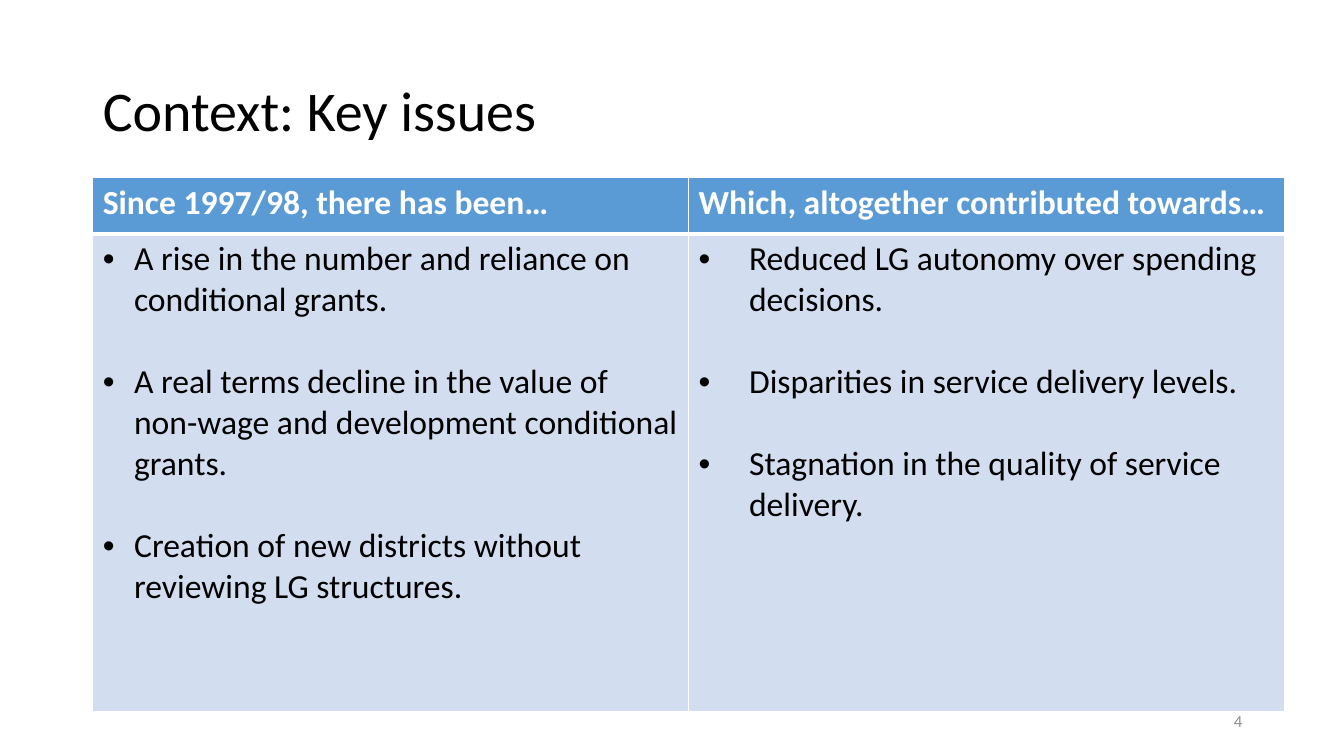
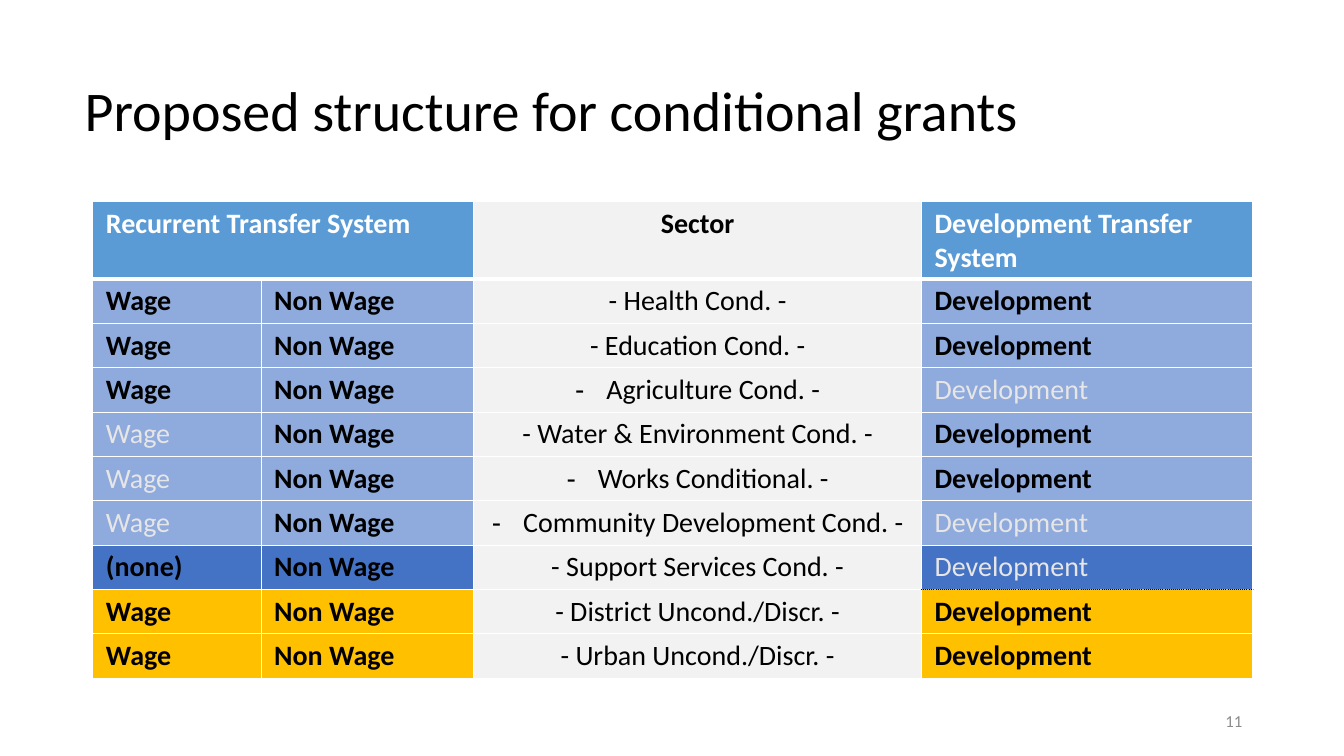
import pptx
import pptx.util
import pptx.dml.color
import pptx.enum.text
import pptx.oxml.ns
import lxml.etree

Inches = pptx.util.Inches
Pt = pptx.util.Pt
RGB = pptx.dml.color.RGBColor
Align = pptx.enum.text.PP_ALIGN
Anchor = pptx.enum.text.MSO_ANCHOR
Fit = pptx.enum.text.MSO_AUTO_SIZE
qn = pptx.oxml.ns.qn

FONT = "Calibri"
BLACK = RGB(0x00, 0x00, 0x00)
WHITE = RGB(0xFF, 0xFF, 0xFF)
HEAD = RGB(0x5B, 0x9B, 0xD5)
PALE = RGB(0xD2, 0xDE, 0xEF)
GREY = RGB(0xF2, 0xF2, 0xF2)
FADED = RGB(0xE7, 0xE6, 0xE6)
NUMBER = RGB(0x8C, 0x8C, 0x8C)
SKY = RGB(0x8F, 0xAA, 0xDC)
BLUE = RGB(0x44, 0x72, 0xC4)
GOLD = RGB(0xFF, 0xC0, 0x00)

LEFT = 0.92
THIN, THICK = (WHITE, 1, "solid"), (WHITE, 3, "solid")
DOTTED = (BLACK, 0.5, "sysDot")

ISSUES = [
    ("Since 1997/98, there has been…", 0.31, [
        "A rise in the number and reliance on conditional grants.",
        "A real terms decline in the value of non-wage and development conditional grants.",
        "Creation of new districts without reviewing LG structures.",
    ]),
    ("Which, altogether contributed towards…", 0.5, [
        "Reduced LG autonomy over spending decisions.",
        "Disparities in service delivery levels.",
        "Stagnation in the quality of service delivery.",
    ]),
]

HEADS = [
    (0, "Recurrent Transfer System", HEAD, WHITE, Align.LEFT),
    (2, "Sector", GREY, BLACK, Align.CENTER),
    (3, "Development Transfer System", HEAD, WHITE, Align.LEFT),
]
WAGE, NON, DEV = "Wage", "Non Wage", "Development"
GRANTS = [
    (SKY, WAGE, "- Health Cond. -", False, ()),
    (SKY, WAGE, "- Education Cond. -", False, ()),
    (SKY, WAGE, "Agriculture Cond. -", True, (DEV,)),
    (SKY, WAGE, "- Water & Environment Cond. -", False, (WAGE,)),
    (SKY, WAGE, "Works Conditional. -", True, (WAGE,)),
    (SKY, WAGE, "Community Development Cond. -", True, (WAGE, DEV)),
    (BLUE, "(none)", "- Support Services Cond. -", False, (DEV,)),
    (GOLD, WAGE, "- District Uncond./Discr. -", False, ()),
    (GOLD, WAGE, "- Urban Uncond./Discr. -", False, ()),
]


def write(frame, lines, size=20, color=BLACK, bold=False, align=Align.LEFT,
          bullet=None, indent=0.31, gap=0, spacing=None):
    for i, line in enumerate(lines):
        para = frame.paragraphs[0] if i == 0 else frame.add_paragraph()
        if bullet:
            props = para._p.get_or_add_pPr()
            props.set("marL", str(Inches(indent)))
            props.set("indent", str(-Inches(indent)))
            lxml.etree.SubElement(props, qn("a:buFont")).set("typeface", "Arial")
            lxml.etree.SubElement(props, qn("a:buChar")).set("char", bullet)
        para.alignment = align
        if i and gap:
            para.space_before = Pt(gap)
        if spacing:
            para.line_spacing = spacing
        run = para.add_run()
        run.text = line
        font = run.font
        font.name, font.size, font.bold = FONT, Pt(size), bold
        font.color.rgb = color


def paint(cell, fill, top=THIN, bottom=THIN):
    props = cell._tc.get_or_add_tcPr()
    for side, (color, width, dash) in zip("LRTB", (THIN, THIN, top, bottom)):
        line = lxml.etree.SubElement(props, qn("a:ln" + side))
        line.set("w", str(Pt(width)))
        solid = lxml.etree.SubElement(line, qn("a:solidFill"))
        lxml.etree.SubElement(solid, qn("a:srgbClr")).set("val", str(color))
        lxml.etree.SubElement(line, qn("a:prstDash")).set("val", dash)
    cell.fill.solid()
    cell.fill.fore_color.rgb = fill


def start(deck, title, left, number):
    slide = deck.slides.add_slide(deck.slide_layouts[5])
    head = slide.shapes.title
    head.left, head.top = Inches(left), Inches(0.4)
    head.width, head.height = Inches(11.5), Inches(1.45)
    frame = head.text_frame
    frame.auto_size = Fit.NONE
    frame.vertical_anchor = Anchor.MIDDLE
    write(frame, [title], size=40, spacing=0.9)
    box = slide.shapes.add_textbox(Inches(9.42), Inches(6.95), Inches(3), Inches(0.4))
    box.text_frame.word_wrap = True
    box.text_frame.vertical_anchor = Anchor.MIDDLE
    write(box.text_frame, [number], size=12, color=NUMBER, align=Align.RIGHT)
    return slide


def grid(slide, top, widths, heights):
    shape = slide.shapes.add_table(
        len(heights), len(widths), Inches(LEFT), Inches(top),
        Inches(sum(widths)), Inches(sum(heights)))
    table = shape.table
    table.horz_banding = False
    for col, width in zip(table.columns, widths):
        col.width = Inches(width)
    for row, height in zip(table.rows, heights):
        row.height = Inches(height)
    return table


def issues(deck):
    slide = start(deck, "Context: Key issues", LEFT, "4")
    table = grid(slide, 1.76, [5.91] * 2, [0.56, 4.74])
    for col, (head, indent, points) in enumerate(ISSUES):
        top, body = table.cell(0, col), table.cell(1, col)
        paint(top, HEAD, bottom=THICK)
        write(top.text_frame, [head], size=24, color=WHITE, bold=True)
        paint(body, PALE, top=THICK)
        write(body.text_frame, points, size=24, bullet="•", indent=indent, gap=29.3)


def grants(deck):
    slide = start(deck, "Proposed structure for conditional grants", 0.74, "11")
    table = grid(slide, 2, [1.67, 2.11, 4.44, 3.28], [0.77] + [0.44] * len(GRANTS))
    table.cell(0, 0).merge(table.cell(0, 1))
    for cell in table.iter_cells():
        cell.margin_left = cell.margin_right = Inches(0.13)
    paint(table.cell(0, 1), HEAD, bottom=THICK)
    for col, head, fill, color, align in HEADS:
        cell = table.cell(0, col)
        paint(cell, fill, bottom=THICK)
        write(cell.text_frame, [head], color=color, bold=True, align=align)
    for row, (fill, wage, sector, dash, faded) in enumerate(GRANTS, 1):
        for col, word in enumerate((wage, NON, sector, DEV)):
            cell = table.cell(row, col)
            edge = THICK if row == 1 else THIN
            last = col == 3
            paint(cell, GREY if col == 2 else fill,
                  top=DOTTED if last and row == 8 else edge,
                  bottom=DOTTED if last and row == 7 else THIN)
            if col == 2:
                write(cell.text_frame, [word], align=Align.CENTER,
                      bullet="-" if dash else None)
            else:
                dim = word in faded
                write(cell.text_frame, [word], color=FADED if dim else BLACK,
                      bold=not dim)


def main():
    deck = pptx.Presentation()
    deck.slide_width, deck.slide_height = Inches(13.33), Inches(7.5)
    issues(deck)
    grants(deck)
    deck.save("out.pptx")


if __name__ == "__main__":
    main()
